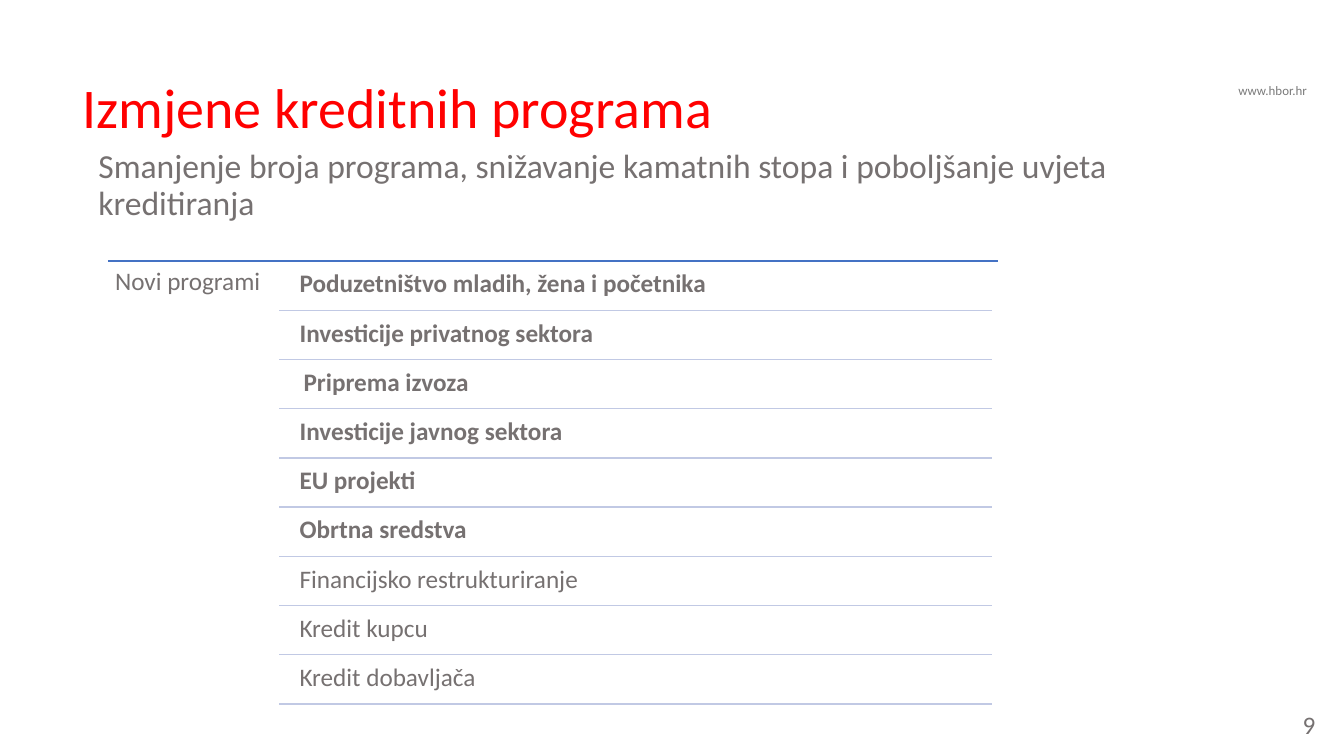
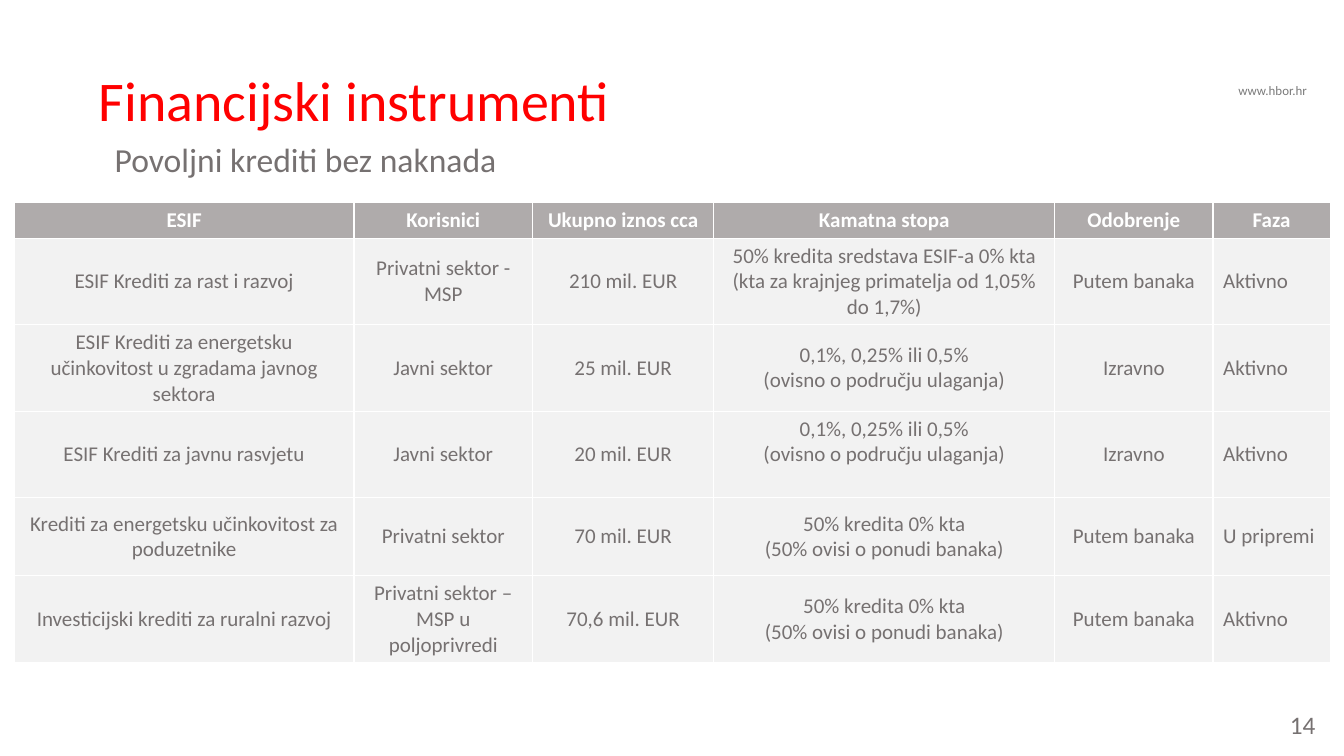
from lxml.etree import SubElement
from pptx import Presentation
from pptx.dml.color import RGBColor
from pptx.enum.shapes import MSO_CONNECTOR
from pptx.enum.text import MSO_ANCHOR, PP_ALIGN
from pptx.oxml import parse_xml
from pptx.oxml.ns import nsdecls, qn
from pptx.util import Cm, Pt

FONT = "Calibri"
COLORS = {
    "title": "FF0000",
    "text": "767171",
    "url": "7A7A7A",
    "accent": "4472C4",
    "rule": "C1C9E4",
    "head": "AFABAB",
    "cell": "F2F2F2",
    "white": "FFFFFF",
}


def add_run(p, text, size, color, bold=False):
    r = p.add_run()
    r.text = text
    r.font.name = FONT
    r.font.size = Pt(size)
    r.font.bold = bold
    r.font.color.rgb = RGBColor.from_string(COLORS[color])


def add_text(s, box, text, size, color="text", bold=False, align=PP_ALIGN.LEFT, spacing=0.9, inset=None):
    tf = s.shapes.add_textbox(*[Cm(v) for v in box]).text_frame
    tf.word_wrap = True
    if inset is not None:
        tf.margin_left = tf.margin_right = tf.margin_top = tf.margin_bottom = Cm(inset)
    p = tf.paragraphs[0]
    p.alignment = align
    p.line_spacing = spacing
    add_run(p, text, size, color, bold)


prs = Presentation()
prs.slide_width = Cm(33.87)
prs.slide_height = Cm(19.05)

headings = [
    ("9", 1.83, 1.9, "Izmjene kreditnih programa",
     "Smanjenje broja programa, snižavanje kamatnih stopa i poboljšanje uvjeta kreditiranja"),
    ("14", 2.24, 1.73, "Financijski instrumenti", "Povoljni krediti bez naknada"),
]
slides = []
for number, left, top, title, subtitle in headings:
    s = prs.slides.add_slide(prs.slide_layouts[6])
    add_text(s, (29.13, 17.75, 4.27, 1.02), number, 18, align=PP_ALIGN.RIGHT, spacing=1.0)
    add_text(s, (30.96, 1.96, 2.36, 0.66), "www.hbor.hr", 9.2, "url", spacing=1.0)
    add_text(s, (left, top, 28.83, 2.21), title, 40, "title")
    add_text(s, (left + 0.4, top + 1.75, 28.83, 2.41), subtitle, 24)
    slides.append(s)
programs_slide, instruments_slide = slides

programs = [
    ("Poduzetništvo mladih, žena i početnika", True, 0),
    ("Investicije privatnog sektora", True, 0),
    ("Priprema izvoza", True, 0.1),
    ("Investicije javnog sektora", True, 0),
    ("EU projekti", True, 0),
    ("Obrtna sredstva", True, 0),
    ("Financijsko restrukturiranje", False, 0),
    ("Kredit kupcu", False, 0),
    ("Kredit dobavljača", False, 0),
]
list_top, pitch = 6.58, 1.24
rules = [(2.72, 25.15, list_top, "accent")]
add_text(programs_slide, (2.72, list_top, 4.32, 11.2), "Novi programi", 18, inset=0.18)
for i, (name, bold, shift) in enumerate(programs):
    y = list_top + i * pitch
    add_text(programs_slide, (7.37 + shift, y + 0.07, 17.63, 1.17), name, 18, bold=bold, inset=0.18)
    rules.append((7.04, 24.99, y + pitch, "rule"))
for x1, x2, y, color in rules:
    line = programs_slide.shapes.add_connector(MSO_CONNECTOR.STRAIGHT, Cm(x1), Cm(y), Cm(x2), Cm(y))
    line.line.color.rgb = RGBColor.from_string(COLORS[color])
    line.line.width = Pt(1)
    SubElement(line._element.spPr, qn("a:effectLst"))

rows = [
    ["ESIF", "Korisnici", "Ukupno iznos cca", "Kamatna stopa", "Odobrenje", "Faza"],
    ["ESIF Krediti za rast i razvoj", "Privatni sektor - MSP", "210 mil. EUR",
     "50% kredita sredstava ESIF-a 0% kta\n(kta za krajnjeg primatelja od 1,05% do 1,7%)",
     "Putem banaka", "Aktivno"],
    ["ESIF Krediti za energetsku učinkovitost u zgradama javnog sektora", "Javni sektor", "25 mil. EUR",
     "0,1%, 0,25% ili 0,5%\n(ovisno o području ulaganja)", "Izravno", "Aktivno"],
    ["ESIF Krediti za javnu rasvjetu", "Javni sektor", "20 mil. EUR",
     "0,1%, 0,25% ili 0,5%\n(ovisno o području ulaganja)", "Izravno", "Aktivno"],
    ["Krediti za energetsku učinkovitost za poduzetnike", "Privatni sektor", "70 mil. EUR",
     "50% kredita 0% kta\n(50% ovisi o ponudi banaka)", "Putem banaka", "U pripremi"],
    ["Investicijski krediti za ruralni razvoj", "Privatni sektor – MSP u poljoprivredi", "70,6 mil. EUR",
     "50% kredita 0% kta\n(50% ovisi o ponudi banaka)", "Putem banaka", "Aktivno"],
]
widths = [8.56, 4.5, 4.57, 8.59, 3.99, 2.95]
heights = [0.87, 2.18, 2.18, 2.18, 1.97, 2.18]
table = instruments_slide.shapes.add_table(
    len(rows), len(widths), Cm(0.36), Cm(5.11), Cm(sum(widths)), Cm(sum(heights))).table
for column, width in zip(table.columns, widths):
    column.width = Cm(width)
for i, (row, height) in enumerate(zip(rows, heights)):
    table.rows[i].height = Cm(height)
    header = i == 0
    for j, text in enumerate(row):
        cell = table.cell(i, j)
        cell.vertical_anchor = MSO_ANCHOR.MIDDLE
        for side in ("lnL", "lnR", "lnT", "lnB"):
            cell._tc.get_or_add_tcPr().append(parse_xml(
                f'<a:{side} {nsdecls("a")} w="12700"><a:solidFill>'
                f'<a:srgbClr val="{COLORS["white"]}"/></a:solidFill></a:{side}>'))
        cell.fill.solid()
        cell.fill.fore_color.rgb = RGBColor.from_string(COLORS["head" if header else "cell"])
        tf = cell.text_frame
        for k, part in enumerate(text.split("\n")):
            p = tf.add_paragraph() if k else tf.paragraphs[0]
            p.alignment = PP_ALIGN.LEFT if j == 5 and not header else PP_ALIGN.CENTER
            add_run(p, part, 15, "white" if header else "text", header)
table.cell(3, 3).margin_bottom = Cm(0.77)

prs.save("out.pptx")
